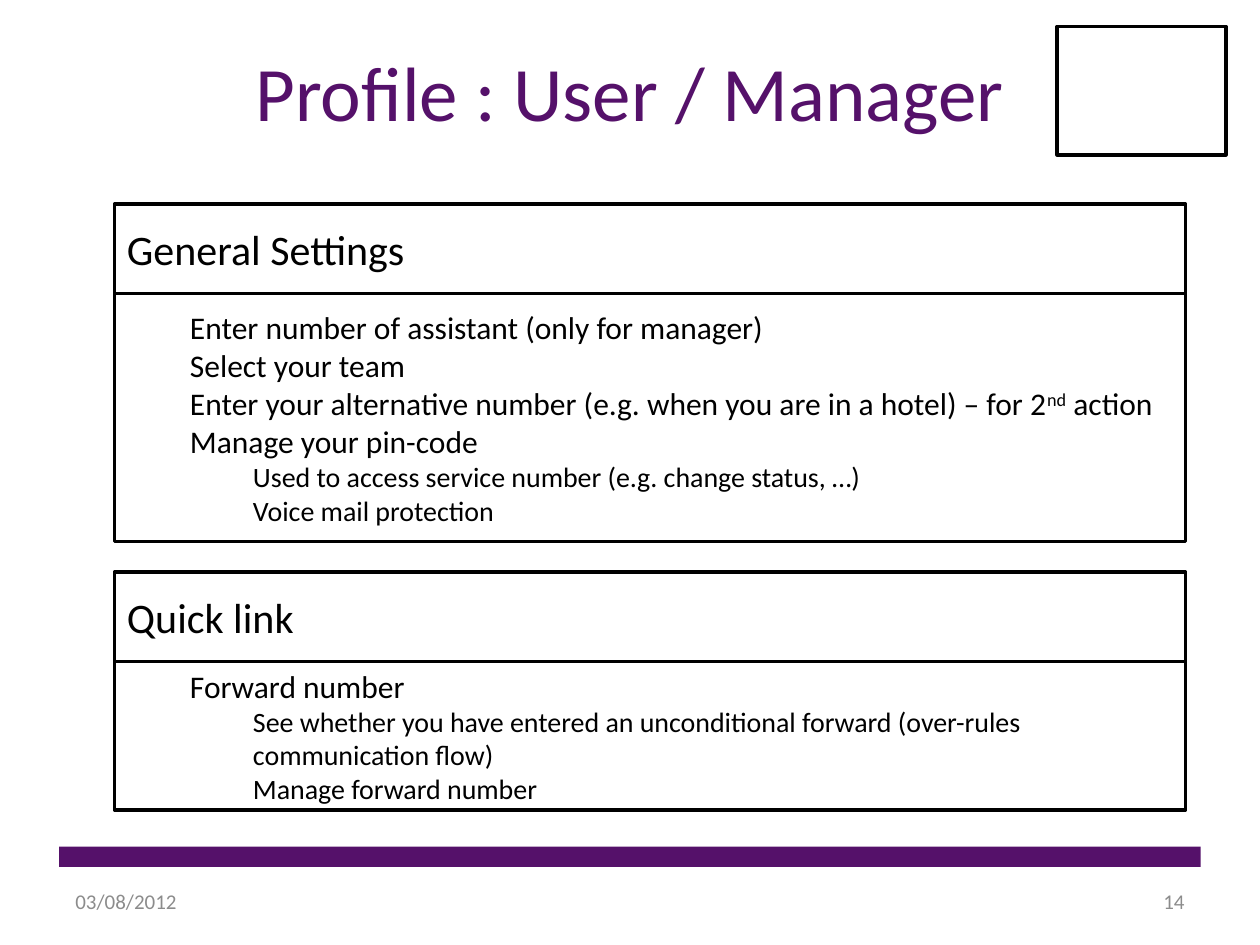
"""Build the user and manager profile slide."""
from pptx import Presentation
from pptx.dml.color import RGBColor
from pptx.enum.shapes import MSO_SHAPE
from pptx.enum.text import MSO_ANCHOR, PP_ALIGN
from pptx.util import Inches, Pt

HUES = {"brand": "55116A", "ink": "000000", "grey": "8C8C8C"}
TITLE = "Profile : User / Manager"
DATE, PAGE = "03/08/2012", "14"
CARDS = [
    ("General Settings", 1.97, [
        (1, "Enter number of assistant (only for manager)"),
        (1, "Select your team"),
        (1, "Enter your alternative number (e.g. when you are in a hotel) – for 2", "nd", " action"),
        (1, "Manage your pin-code"),
        (2, "Used to access service number (e.g. change status, …)"),
        (2, "Voice mail protection"),
    ]),
    ("Quick link", 1.18, [
        (1, "Forward number"),
        (2, "See whether you have entered an unconditional forward (over-rules communication flow)"),
        (2, "Manage forward number"),
    ]),
]
SIZES = {0: 24, 1: 18, 2: 16}
LEFT, TOP, WIDTH, HEAD, GAP = 0.91, 1.62, 8.5, 0.71, 0.24
FOOT = (6.95, 2.33, 0.4)


def hue(name):
    return RGBColor.from_string(HUES[name])


def write(frame, rows, size=None, color="ink", align=PP_ALIGN.LEFT, anchor=MSO_ANCHOR.MIDDLE):
    """Fill a frame with rows of (level, run, raised run, run)."""
    frame.word_wrap = True
    frame.vertical_anchor = anchor
    for i, (level, *parts) in enumerate(rows):
        para = frame.add_paragraph() if i else frame.paragraphs[0]
        para.level = level
        para.alignment = align
        props = para._p.get_or_add_pPr()
        props.set("marL", str(Inches(level / 2)))
        props.set("indent", "0")
        for j, part in enumerate(parts):
            run = para.add_run()
            run.text = part
            font = run.font
            font.name, font.size = "Calibri", Pt(size or SIZES[level])
            font.color.rgb = hue(color)
            if j == 1:
                run._r.get_or_add_rPr().set("baseline", "30000")


def place(item, *area):
    item.left, item.top, item.width, item.height = map(Inches, area)


def box(slide, *area, fill=None):
    shape = slide.shapes.add_shape(MSO_SHAPE.RECTANGLE, *map(Inches, area))
    shape.shadow.inherit = False
    if fill:
        shape.fill.solid()
        shape.fill.fore_color.rgb = hue(fill)
        shape.line.fill.background()
    else:
        shape.fill.background()
        shape.line.color.rgb = hue("ink")
        shape.line.width = Pt(2)
    return shape


def main():
    deck = Presentation()
    deck.slide_width, deck.slide_height = Inches(10), Inches(7.5)
    slide = deck.slides.add_slide(deck.slide_layouts[5])
    box(slide, 0.47, 6.72, 9.06, 0.16, fill="brand")

    title = slide.shapes.title
    place(title, 0.5, 0.3, 9, 1.25)
    write(title.text_frame, [(0, TITLE)], size=44, color="brand",
          align=PP_ALIGN.CENTER, anchor=MSO_ANCHOR.TOP)

    for text, left, align in ((DATE, 0.5, PP_ALIGN.LEFT), (PAGE, 7.17, PP_ALIGN.RIGHT)):
        note = slide.shapes.add_textbox(*map(Inches, (left, *FOOT)))
        write(note.text_frame, [(0, text)], size=12, color="grey", align=align)

    top = TOP
    for head, tall, rows in CARDS:
        for high, lines in ((HEAD, [(0, head)]), (tall, rows)):
            write(box(slide, LEFT, top, WIDTH, high).text_frame, lines)
            top += high
        top += GAP

    box(slide, 8.39, 0.21, 1.34, 1.02)
    deck.save("out.pptx")


if __name__ == "__main__":
    main()
